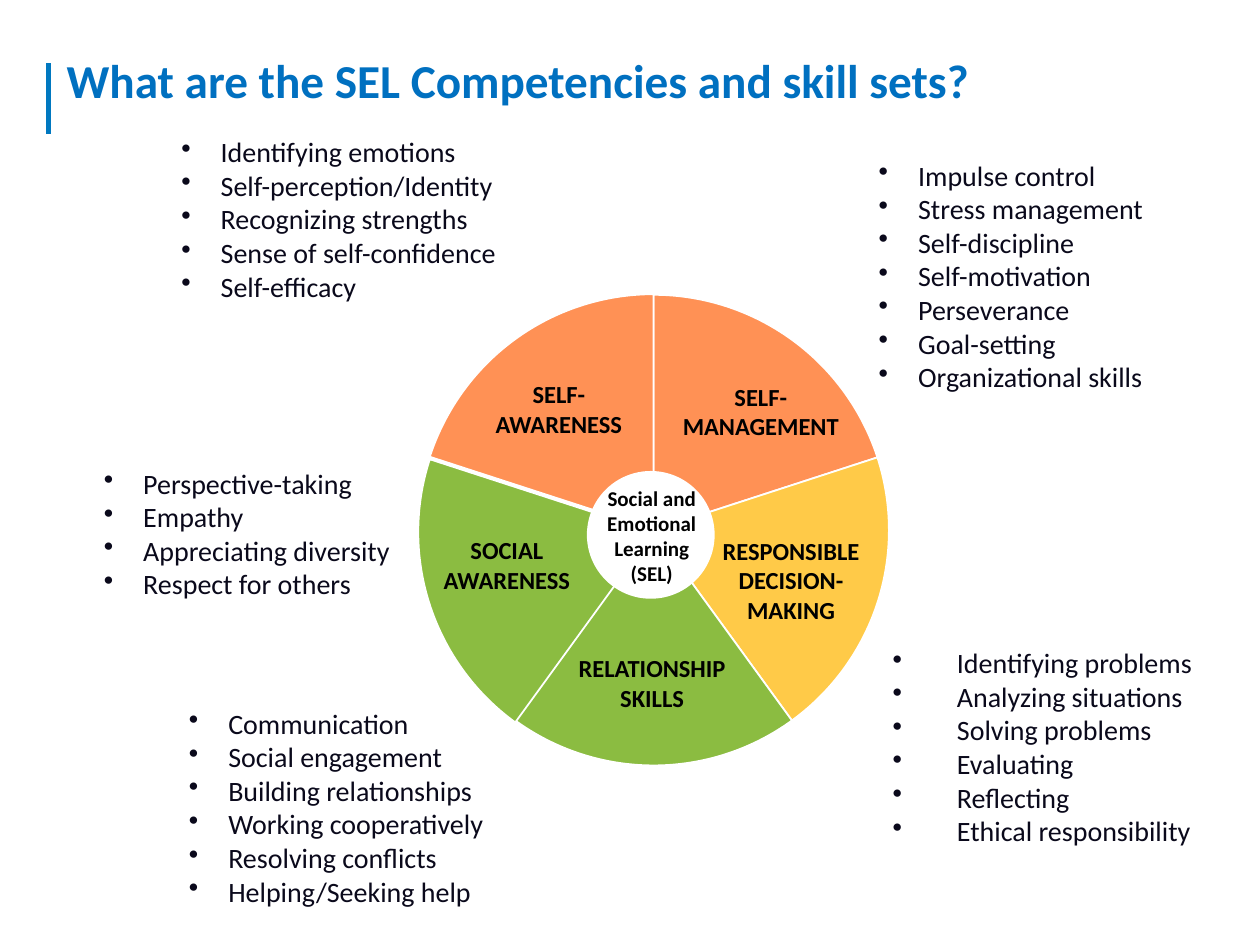
from lxml import etree
from pptx import Presentation
from pptx.dml.color import RGBColor
from pptx.enum.shapes import MSO_CONNECTOR, MSO_SHAPE
from pptx.enum.text import PP_ALIGN
from pptx.oxml.ns import qn
from pptx.util import Pt

STRAIGHT = MSO_CONNECTOR.STRAIGHT
PIE, OVAL = MSO_SHAPE.PIE, MSO_SHAPE.OVAL
LEFT, CENTER = PP_ALIGN.LEFT, PP_ALIGN.CENTER

ORANGE = RGBColor(0xFF, 0x79, 0x30)
YELLOW = RGBColor(0xFF, 0xCA, 0x48)
GREEN = RGBColor(0x8B, 0xBC, 0x41)
WHITE = RGBColor(0xFF, 0xFF, 0xFF)
BLACK = RGBColor(0x00, 0x00, 0x00)
NAVY = RGBColor(0x0A, 0x09, 0x1B)
TITLE_BLUE = RGBColor(0x00, 0x70, 0xC0)
BAR_BLUE = RGBColor(0x00, 0x78, 0xC0)
FONT = "Calibri"

# Content: boxes are (left, top, width, height) in points
TITLE = "What are the SEL Competencies and skill sets?"
TITLE_BOX = (69.12, 61.92, 1167.12, 101.52)

# Wheel slices clockwise from the top: colour, opacity in percent, top
SLICES = [
    (ORANGE, 82, 336.96),
    (YELLOW, 100, 336.96),
    (GREEN, 100, 336.96),
    (GREEN, 100, 339.12),
    (ORANGE, 82, 336.24),
]
WHEEL_LEFT, WHEEL_SIZE = 478.08, 537.84
SWEEP = 360 / len(SLICES)
ADJUSTMENT_PER_DEGREE = 0.6  # 60000 angle units per degree, scaled by 100000

HUB_BOX = (671.76, 539.28, 144, 144)
HUB_LABEL_BOX = (678.96, 550.8, 131.76, 123.84)
HUB_LABEL = ["Social and", "Emotional", "Learning", "(SEL)"]

COMPETENCIES = [
    ((521.28, 429.84, 234.72, 74.88), ["SELF-", "AWARENESS"]),
    ((737.28, 432.72, 264.24, 74.88), ["SELF-", "MANAGEMENT"]),
    ((776.16, 609.12, 255.6, 108.72), ["RESPONSIBLE DECISION-", "MAKING"]),
    ((618.48, 743.04, 253.44, 74.88), ["RELATIONSHIP SKILLS"]),
    ((465.12, 608.4, 228.24, 74.88), ["SOCIAL AWARENESS"]),
]

# Skill lists: box, hanging indent, items
INDENT, WIDE_INDENT = 45, 73.5
SKILLS = [
    ((111.6, 529.2, 360, 162.72), INDENT,
     ["Perspective-taking", "Empathy", "Appreciating diversity",
      "Respect for others"]),
    ((208.8, 803.52, 372.24, 239.76), INDENT,
     ["Communication", "Social engagement", "Building relationships",
      "Working cooperatively", "Resolving conflicts",
      "Helping/Seeking help"]),
    ((200.16, 150.48, 400.32, 200.88), INDENT,
     ["Identifying emotions", "Self-perception/Identity",
      "Recognizing strengths", "Sense of self-confidence",
      "Self-efficacy"]),
    ((1013.04, 734.4, 383.76, 239.76), WIDE_INDENT,
     ["Identifying problems", "Analyzing situations", "Solving problems",
      "Evaluating", "Reflecting", "Ethical responsibility"]),
    ((997.2, 177.12, 400.32, 278.64), INDENT,
     ["Impulse control", "Stress management", "Self-discipline",
      "Self-motivation", "Perseverance", "Goal-setting",
      "Organizational skills"]),
]


def points(box):
    return [Pt(value) for value in box]


def add_bullet(paragraph, indent):
    properties = paragraph._p.get_or_add_pPr()
    properties.set("marL", str(Pt(indent)))
    properties.set("indent", str(-Pt(indent)))
    etree.SubElement(properties, qn("a:buChar"), char="•")


def add_text(slide, box, lines, size, color, bold=True, align=CENTER,
             indent=None, line_spacing=None):
    frame = slide.shapes.add_textbox(*points(box)).text_frame
    frame.word_wrap = True
    for index, line in enumerate(lines):
        paragraph = frame.add_paragraph() if index else frame.paragraphs[0]
        paragraph.text = line
        paragraph.alignment = align
        if line_spacing:
            paragraph.line_spacing = line_spacing
        if indent:
            add_bullet(paragraph, indent)
        paragraph.font.name = FONT
        paragraph.font.size = Pt(size)
        paragraph.font.bold = bold
        paragraph.font.color.rgb = color


def add_wheel_part(slide, kind, box, color, opacity=100):
    shape = slide.shapes.add_shape(kind, *points(box))
    shape.shadow.inherit = False
    shape.fill.solid()
    shape.fill.fore_color.rgb = color
    if opacity < 100:
        fill_color = shape._element.spPr.find(qn("a:solidFill"))[0]
        etree.SubElement(fill_color, qn("a:alpha"), val=str(opacity * 1000))
    shape.line.color.rgb = WHITE
    shape.line.width = Pt(2)
    return shape


def main():
    presentation = Presentation()
    presentation.slide_width, presentation.slide_height = Pt(1440), Pt(1080)
    slide = presentation.slides.add_slide(presentation.slide_layouts[6])

    # Title with its accent bar
    bar = slide.shapes.add_connector(STRAIGHT, *points((55.44, 72, 55.44, 153.36)))
    bar.line.color.rgb = BAR_BLUE
    bar.line.width = Pt(5)
    etree.SubElement(bar._element.spPr, qn("a:effectLst"))
    add_text(slide, TITLE_BOX, [TITLE], 54, TITLE_BLUE, align=LEFT,
             line_spacing=0.9)

    # Wheel, starting at twelve o'clock
    for index, (color, opacity, top) in enumerate(SLICES):
        box = (WHEEL_LEFT, top, WHEEL_SIZE, WHEEL_SIZE)
        wedge = add_wheel_part(slide, PIE, box, color, opacity)
        start = (270 + index * SWEEP) % 360
        wedge.adjustments[0] = start * ADJUSTMENT_PER_DEGREE
        wedge.adjustments[1] = (start + SWEEP) % 360 * ADJUSTMENT_PER_DEGREE
    add_wheel_part(slide, OVAL, HUB_BOX, WHITE)

    # Wheel labels
    for box, lines in COMPETENCIES:
        add_text(slide, box, lines, 28, BLACK)
    add_text(slide, HUB_LABEL_BOX, HUB_LABEL, 24, BLACK)

    # Skill lists around the wheel
    for box, indent, items in SKILLS:
        add_text(slide, box, items, 32, NAVY, bold=False, align=LEFT,
                 indent=indent)

    presentation.save("out.pptx")


if __name__ == "__main__":
    main()
